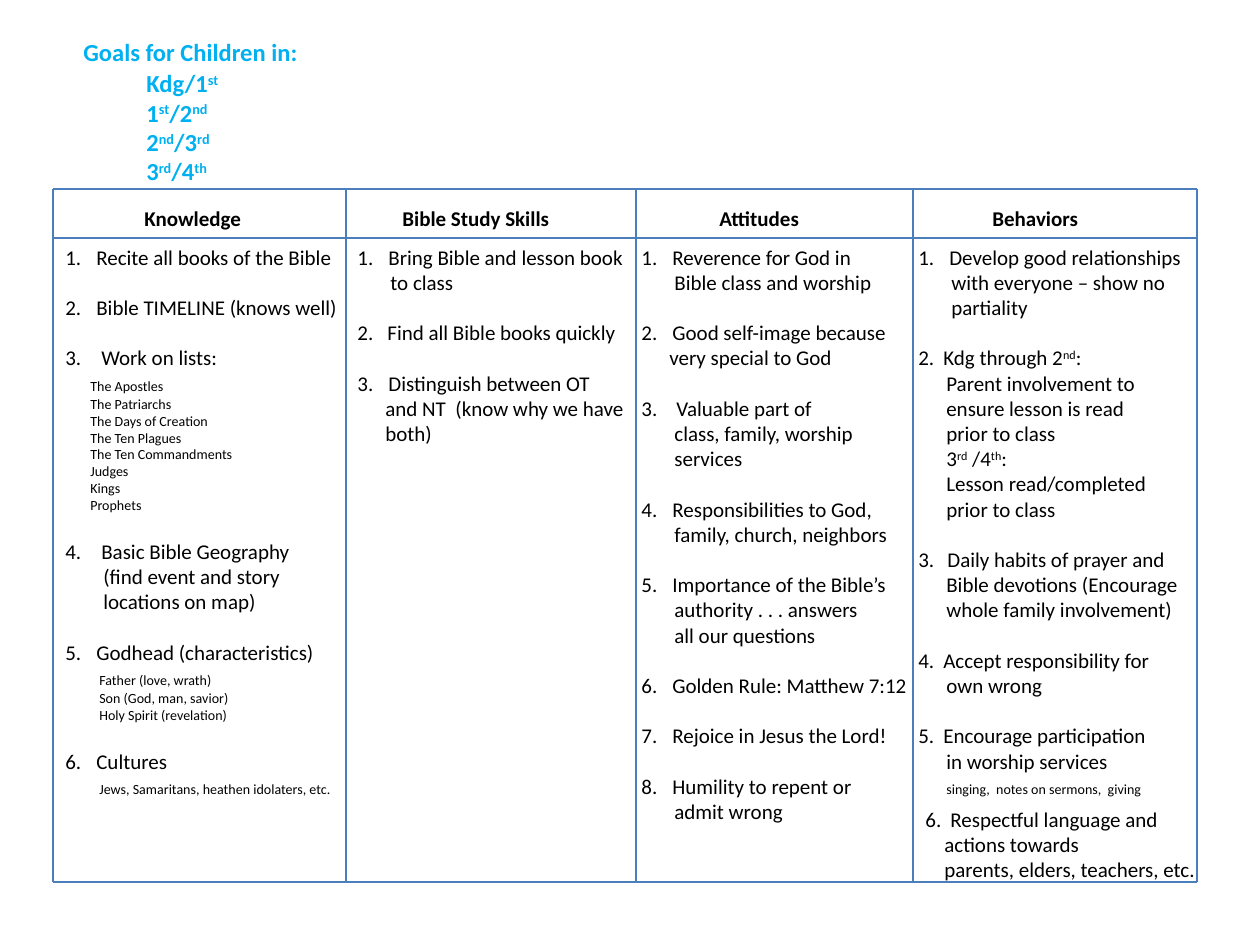
from dataclasses import dataclass

from lxml import etree
from pptx import Presentation
from pptx.dml.color import RGBColor
from pptx.enum.shapes import MSO_CONNECTOR
from pptx.oxml.ns import qn
from pptx.util import Emu, Pt

STRAIGHT = MSO_CONNECTOR.STRAIGHT
SLIDE_WIDTH, SLIDE_HEIGHT = 1260, 945

GRID_X = [53, 346, 636, 913, 1197]
GRID_Y = [189, 238, 882]


def px(length):
    return Emu(round(length * 914400 / 126))


def color(hex_string):
    return RGBColor.from_string(hex_string)


@dataclass
class Goal:
    """One numbered goal; indents are measured in px from its number."""
    lines: list
    indent: int = 31
    wrap_indent: int = 33
    details: tuple = ()
    detail_indent: int = 34


KNOWLEDGE = [
    Goal(["Recite all books of the Bible"]),
    Goal(["Bible TIMELINE (knows well)"]),
    Goal(["Work on lists:"], indent=36, detail_indent=25, details=(
        "The Apostles", "The Patriarchs", "The Days of Creation",
        "The Ten Plagues", "The Ten Commandments",
        "Judges", "Kings", "Prophets")),
    Goal(["Basic Bible Geography", "(find event and story",
          "locations on map)"], indent=36, wrap_indent=38),
    Goal(["Godhead (characteristics)"], details=(
        "Father (love, wrath)", "Son (God, man, savior)",
        "Holy Spirit (revelation)")),
    Goal(["Cultures"], details=("Jews, Samaritans, heathen idolaters, etc.",)),
]
STUDY_SKILLS = [
    Goal(["Bring Bible and lesson book", "to class"]),
    Goal(["Find all Bible books quickly"], indent=30),
    Goal(["Distinguish between OT", "and NT  (know why we have", "both)"],
         wrap_indent=28),
]
ATTITUDES = [
    Goal(["Reverence for God in", "Bible class and worship"]),
    Goal(["Good self-image because", "very special to God"], wrap_indent=28),
    Goal(["Valuable part of", "class, family, worship", "services"], indent=35),
    Goal(["Responsibilities to God,", "family, church, neighbors"]),
    Goal(["Importance of the Bible’s", "authority . . . answers",
          "all our questions"]),
    Goal(["Golden Rule: Matthew 7:12"]),
    Goal(["Rejoice in Jesus the Lord!"]),
    Goal(["Humility to repent or", "admit wrong"]),
]
BEHAVIORS = [
    Goal(["Develop good relationships", "with everyone – show no",
          "partiality"]),
    Goal(["Kdg through 2^nd^:", "Parent involvement to",
          "ensure lesson is read", "prior to class", "3^rd^ /4^th^:",
          "Lesson read/completed", "prior to class"],
         indent=25, wrap_indent=28),
    Goal(["Daily habits of prayer and", "Bible devotions (Encourage",
          "whole family involvement)"], indent=29, wrap_indent=28),
    Goal(["Accept responsibility for", "own wrong"],
         indent=25, wrap_indent=28),
    Goal(["Encourage participation", "in worship services"],
         indent=25, wrap_indent=28, detail_indent=28,
         details=("singing,  notes on sermons,  giving",)),
]
RESPECT = [
    Goal(["Respectful language and", "actions towards",
          "parents, elders, teachers, etc."], indent=25, wrap_indent=19),
]


class GoalSheet:
    """Holds the style and the slide, and draws each kind of element."""
    font = "Calibri"
    title_color, text_color, line_color = "00B0F0", "000000", "4B7EBC"
    title_size, text_size, detail_size = 14, 12, 8
    goal_gap = 14.4

    def __init__(self, slide):
        self.slide = slide

    def line(self, x1, y1, x2, y2):
        rule = self.slide.shapes.add_connector(
            STRAIGHT, px(x1), px(y1), px(x2), px(y2))
        rule.line.color.rgb = color(self.line_color)
        rule.line.width = Pt(0.75)
        etree.SubElement(rule._element.spPr, qn("a:effectLst"))

    def frame(self, left, top, width, height):
        box = self.slide.shapes.add_textbox(
            px(left), px(top), px(width), px(height))
        box.text_frame.word_wrap = True
        box.text_frame.margin_right = 0
        return box.text_frame

    def add_text(self, paragraph, text, size, hex_color, bold=False):
        """Fill a paragraph; parts between ^ marks become superscript."""
        for position, part in enumerate(text.split("^")):
            if not part:
                continue
            run = paragraph.add_run()
            run.text = part
            run.font.name = self.font
            run.font.size = Pt(size)
            run.font.bold = bold
            run.font.color.rgb = color(hex_color)
            if position % 2:
                run._r.get_or_add_rPr().set("baseline", "30000")

    def heading(self, left, top, width, height, lines, size, hex_color):
        frame = self.frame(left, top, width, height)
        for row, text in enumerate(lines):
            paragraph = frame.add_paragraph() if row else frame.paragraphs[0]
            self.add_text(paragraph, text, size, hex_color, bold=True)

    def indent(self, paragraph, left, number=None):
        """Indent a paragraph, hanging a number in front when one is given."""
        properties = paragraph._p.get_or_add_pPr()
        properties.set("marL", str(px(left)))
        properties.set("indent", str(-px(left) if number else 0))
        if number:
            etree.SubElement(properties, qn("a:buFont"), typeface="+mj-lt")
            etree.SubElement(properties, qn("a:buAutoNum"),
                             type="arabicPeriod", startAt=str(number))

    def goals(self, left, top, width, height, goals, start=1):
        frame = self.frame(left, top, width, height)
        for number, goal in enumerate(goals, start):
            for row, text in enumerate(goal.lines):
                first = number == start and row == 0
                paragraph = frame.paragraphs[0] if first else frame.add_paragraph()
                if row:
                    self.indent(paragraph, goal.wrap_indent)
                else:
                    self.indent(paragraph, goal.indent, number)
                    if not first:
                        paragraph.space_before = Pt(self.goal_gap)
                self.add_text(paragraph, text, self.text_size, self.text_color)
            for row, text in enumerate(goal.details):
                paragraph = frame.add_paragraph()
                self.indent(paragraph, goal.detail_indent)
                if row == 0:
                    paragraph.space_before = Pt(4)
                    paragraph.space_after = Pt(1)
                self.add_text(paragraph, text, self.detail_size, self.text_color)


def main():
    presentation = Presentation()
    presentation.slide_width = px(SLIDE_WIDTH)
    presentation.slide_height = px(SLIDE_HEIGHT)
    sheet = GoalSheet(presentation.slides.add_slide(presentation.slide_layouts[6]))

    sheet.heading(71, 31, 275, 43, ["Goals for Children in:"],
                  sheet.title_size, sheet.title_color)
    grades = ["Kdg/1^st^", "1^st^/2^nd^", "2^nd^/3^rd^", "3^rd^/4^th^"]
    sheet.heading(134, 62, 132, 161, grades, sheet.title_size, sheet.title_color)

    for x in GRID_X:
        sheet.line(x, GRID_Y[0], x, GRID_Y[-1])
    for y in GRID_Y:
        sheet.line(GRID_X[0], y, GRID_X[-1], y)

    for left, name in [(132, "Knowledge"), (390, "Bible Study Skills"),
                       (707, "Attitudes"), (980, "Behaviors")]:
        sheet.heading(left, 199, 180, 38, [name],
                      sheet.text_size, sheet.text_color)

    body_top = GRID_Y[1]
    sheet.goals(53, body_top, 301, 590, KNOWLEDGE)
    sheet.goals(345, body_top, 296, 267, STUDY_SKILLS)
    sheet.goals(629, body_top, 295, 649, ATTITUDES)
    sheet.goals(906, body_top, 291, 615, BEHAVIORS)
    sheet.goals(913, 800, 299, 89, RESPECT, start=6)

    presentation.save("out.pptx")


if __name__ == "__main__":
    main()
